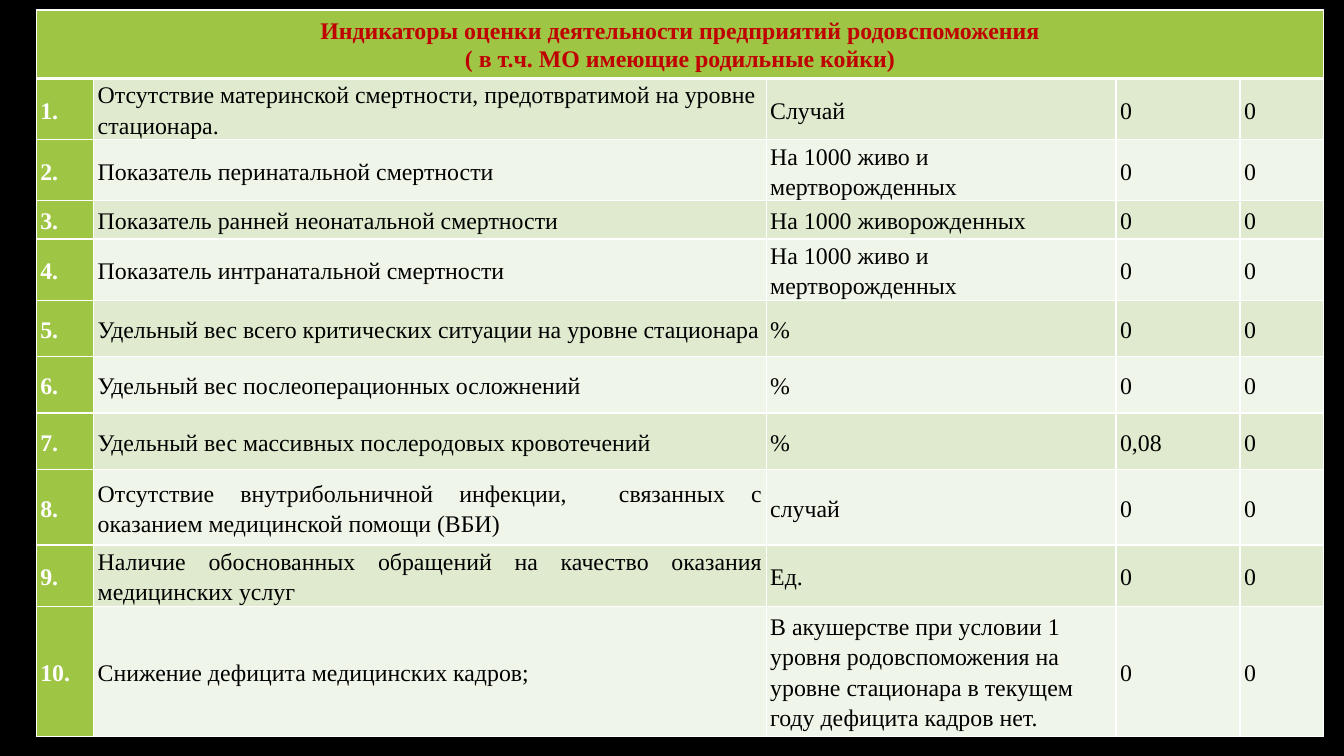
from dataclasses import dataclass

from lxml import etree
from pptx import Presentation
from pptx.dml.color import RGBColor
from pptx.enum.text import MSO_ANCHOR, PP_ALIGN
from pptx.oxml.ns import qn
from pptx.table import _Cell
from pptx.util import Inches, Pt

LEFT, CENTER, JUSTIFY = PP_ALIGN.LEFT, PP_ALIGN.CENTER, PP_ALIGN.JUSTIFY
MIDDLE = MSO_ANCHOR.MIDDLE

COLORS = {
    "background": "000000",
    "accent": "9EC544",
    "odd_row": "DFEACF",
    "even_row": "F0F5E9",
    "border": "FFFFFF",
    "title": "C00000",
    "number": "FFFFFF",
    "text": "000000",
}
FONT = "Times New Roman"
FONT_SIZE = 17
THIN, THICK = 1, 3
COLUMN_WIDTHS = [0.57, 6.67, 3.47, 1.23, 0.83]
HEADER_HEIGHT = 0.68
TITLE = (
    "Индикаторы оценки деятельности предприятий родовспоможения\n"
    "( в т.ч. МО имеющие родильные койки)"
)


@dataclass(frozen=True)
class Indicator:
    name: str
    unit: str
    height: float
    align: PP_ALIGN = LEFT
    first: str = "0"
    second: str = "0"


@dataclass(frozen=True)
class CellStyle:
    fill: str
    color: str
    bold: bool = False
    align: PP_ALIGN = LEFT
    spacing: float = 1.15
    top: int = THIN
    bottom: int = THIN


INDICATORS = [
    Indicator("Отсутствие материнской смертности, предотвратимой на уровне стационара.",
              "Случай", 0.6),
    Indicator("Показатель перинатальной смертности",
              "На 1000 живо и мертворожденных", 0.6),
    Indicator("Показатель ранней неонатальной смертности",
              "На 1000 живорожденных", 0.38),
    Indicator("Показатель интранатальной смертности",
              "На 1000 живо и мертворожденных", 0.6),
    Indicator("Удельный вес всего критических ситуации на уровне стационара",
              "%", 0.56, JUSTIFY),
    Indicator("Удельный вес послеоперационных осложнений", "%", 0.56),
    Indicator("Удельный вес массивных послеродовых кровотечений",
              "%", 0.56, first="0,08"),
    Indicator("Отсутствие внутрибольничной инфекции,  связанных с оказанием "
              "медицинской помощи (ВБИ)", "случай", 0.75, JUSTIFY),
    Indicator("Наличие обоснованных обращений на качество оказания медицинских услуг",
              "Ед.", 0.6, JUSTIFY),
    Indicator("Снижение дефицита медицинских кадров;",
              "В акушерстве при условии 1 уровня родовспоможения на уровне "
              "стационара в текущем году дефицита кадров нет.", 1.29, JUSTIFY),
]


def rgb(name: str) -> RGBColor:
    return RGBColor.from_string(COLORS[name])


def set_borders(cell: _Cell, top: int, bottom: int) -> None:
    tc_pr = cell._tc.get_or_add_tcPr()
    widths = {"a:lnL": THIN, "a:lnR": THIN, "a:lnT": top, "a:lnB": bottom}
    for tag, width in widths.items():
        ln = etree.SubElement(tc_pr, qn(tag), w=str(Pt(width)))
        fill = etree.SubElement(ln, qn("a:solidFill"))
        etree.SubElement(fill, qn("a:srgbClr"), val=COLORS["border"])


def format_cell(cell: _Cell, text: str, style: CellStyle) -> None:
    set_borders(cell, style.top, style.bottom)
    cell.fill.solid()
    cell.fill.fore_color.rgb = rgb(style.fill)
    cell.margin_left = cell.margin_right = Inches(0.04)
    cell.margin_top = cell.margin_bottom = 0
    cell.vertical_anchor = MIDDLE
    cell.text = text
    for p in cell.text_frame.paragraphs:
        p.alignment = style.align
        p.line_spacing = style.spacing
        p.font.name = FONT
        p.font.size = Pt(FONT_SIZE)
        p.font.bold = style.bold
        p.font.color.rgb = rgb(style.color)


def main() -> None:
    prs = Presentation()
    prs.slide_width, prs.slide_height = Inches(13.33), Inches(7.5)
    s = prs.slides.add_slide(prs.slide_layouts[6])
    s.background.fill.solid()
    s.background.fill.fore_color.rgb = rgb("background")

    heights = [HEADER_HEIGHT] + [item.height for item in INDICATORS]
    table = s.shapes.add_table(
        len(heights), len(COLUMN_WIDTHS), Inches(0.36), Inches(0.1),
        Inches(sum(COLUMN_WIDTHS)), Inches(sum(heights)),
    ).table
    for column, width in zip(table.columns, COLUMN_WIDTHS):
        column.width = Inches(width)
    for row, height in zip(table.rows, heights):
        row.height = Inches(height)

    header = CellStyle("accent", "title", True, CENTER, 1.07, bottom=THICK)
    table.cell(0, 0).merge(table.cell(0, len(COLUMN_WIDTHS) - 1))
    for i, cell in enumerate(table.rows[0].cells):
        format_cell(cell, "" if i else TITLE, header)

    for number, item in enumerate(INDICATORS, 1):
        top = THICK if number == 1 else THIN
        band = "odd_row" if number % 2 else "even_row"
        plain = CellStyle(band, "text", top=top)
        contents = [
            (f"{number}.", CellStyle("accent", "number", True, top=top)),
            (item.name, CellStyle(band, "text", align=item.align, top=top)),
            (item.unit, plain),
            (item.first, plain),
            (item.second, plain),
        ]
        for cell, (text, style) in zip(table.rows[number].cells, contents):
            format_cell(cell, text, style)

    prs.save("out.pptx")


if __name__ == "__main__":
    main()
